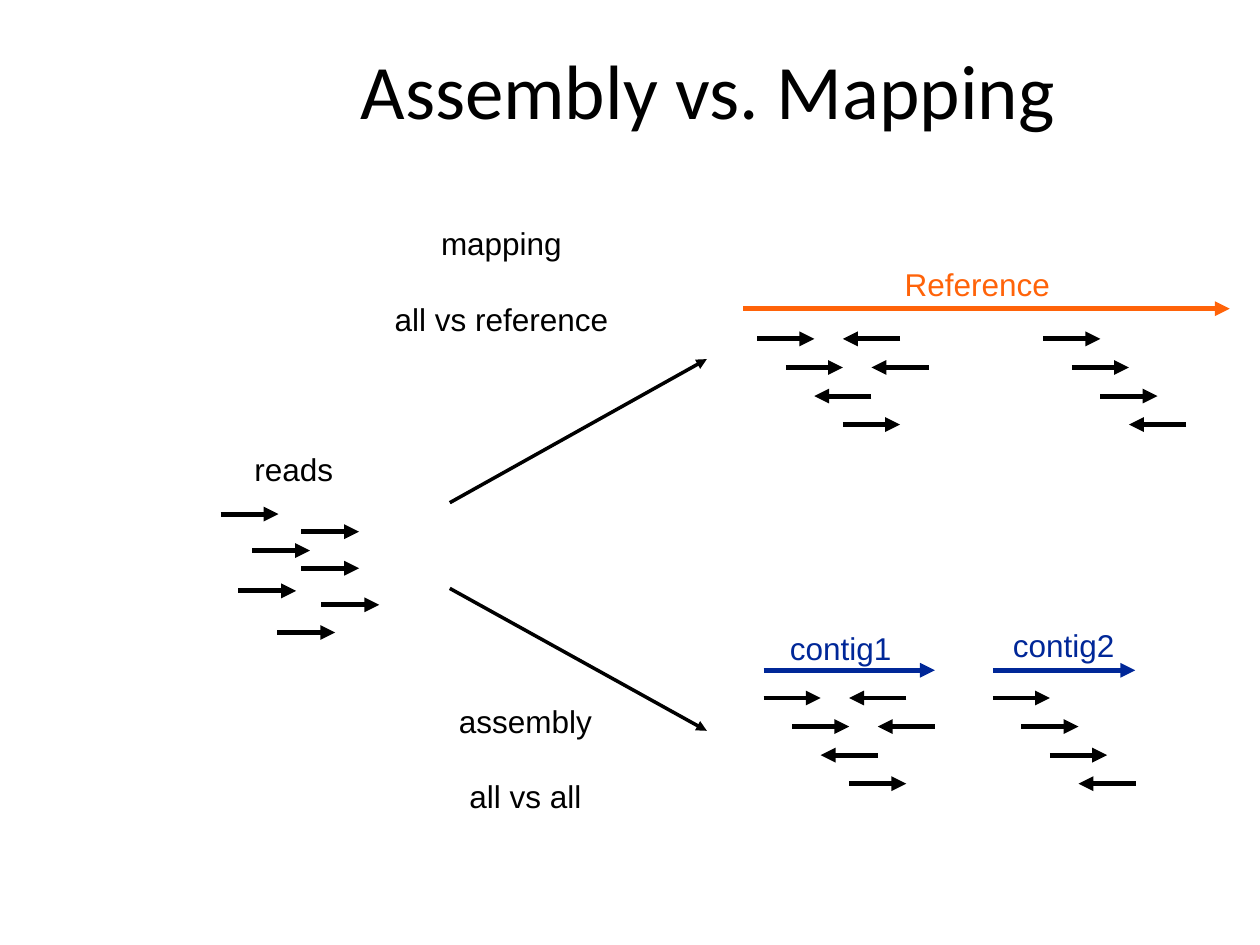
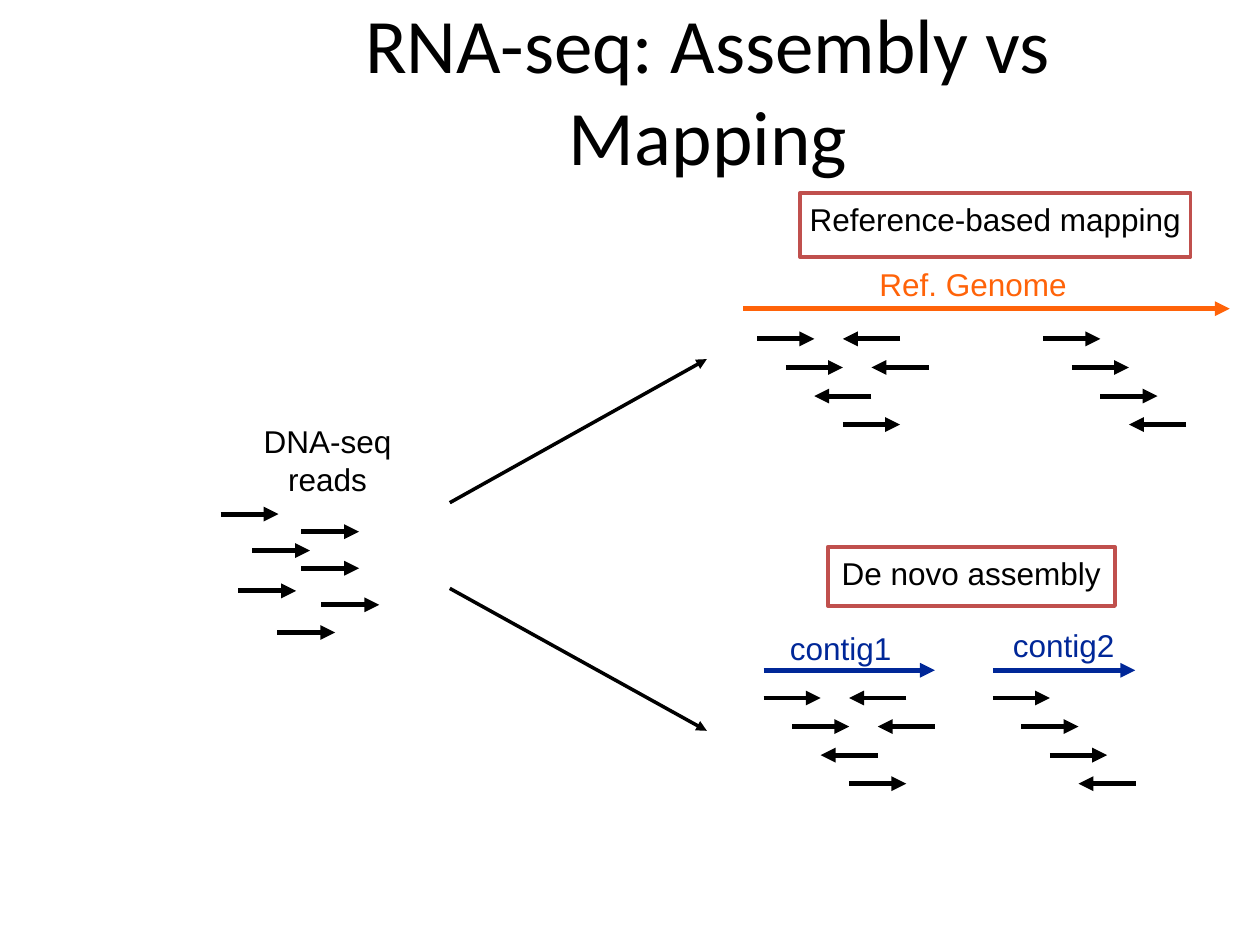
from dataclasses import dataclass

from lxml import etree
from pptx import Presentation
from pptx.dml.color import RGBColor
from pptx.enum.shapes import MSO_CONNECTOR as Connector, MSO_SHAPE as ShapeType
from pptx.enum.text import MSO_ANCHOR as Anchor, PP_ALIGN as Align
from pptx.oxml.ns import qn
from pptx.slide import Slide
from pptx.text.text import TextFrame
from pptx.util import Inches, Pt

COLORS = {
    "ink": "000000",
    "paper": "FFFFFF",
    "contig": "002798",
    "reference": "FF6309",
    "frame": "C0504D",
}
BODY_FONT, TITLE_FONT = "Arial", "Calibri"
READ_WIDTH, HAIRLINE, FRAME_WIDTH = 2.83, 0, 2
READ_LENGTH = 0.46
STEP = 0.68 / 3  # aligned reads sit on a square grid, each two steps long
BLANK_LINE_GAP = 21.5


@dataclass(frozen=True)
class Arrow:
    start: tuple[float, float]
    end: tuple[float, float]
    color: str = "ink"
    width: float = READ_WIDTH


@dataclass(frozen=True)
class Label:
    text: str
    left: float
    top: float
    width: float
    height: float
    color: str = "ink"
    align: Align = Align.LEFT
    gap: float = 0
    framed: bool = False


@dataclass(frozen=True)
class AlignedRead:
    """A read in grid steps from its pile's top left corner."""
    start: int
    row: int
    direction: int = 1


@dataclass(frozen=True)
class Page:
    title: str
    labels: tuple[Label, ...]


LEFT_PILE = (
    AlignedRead(0, 0), AlignedRead(5, 0, -1),
    AlignedRead(1, 1), AlignedRead(6, 1, -1),
    AlignedRead(4, 2, -1), AlignedRead(3, 3),
)
RIGHT_PILE = (
    AlignedRead(0, 0), AlignedRead(1, 1),
    AlignedRead(2, 2), AlignedRead(5, 3, -1),
)
PILES = (
    (6.01, 2.69, LEFT_PILE), (8.28, 2.69, RIGHT_PILE),
    (6.06, 5.54, LEFT_PILE), (7.88, 5.54, RIGHT_PILE),
)
LOOSE_READS = (
    (1.75, 4.08), (2.39, 4.22), (2.0, 4.37), (2.39, 4.51),
    (1.89, 4.69), (2.55, 4.8), (2.2, 5.02),
)
GUIDE_ARROWS = (
    Arrow((3.57, 3.99), (5.61, 2.85), width=HAIRLINE),
    Arrow((3.57, 4.67), (5.61, 5.8), width=HAIRLINE),
    Arrow((5.9, 2.45), (9.76, 2.45), "reference"),
    Arrow((6.06, 5.32), (7.42, 5.32), "contig"),
    Arrow((7.88, 5.32), (9.01, 5.32), "contig"),
)
CONTIG_LABELS = (
    Label("contig1", 6.16, 4.93, 1.1, 0.38, "contig"),
    Label("contig2", 7.93, 4.91, 1.1, 0.38, "contig"),
)
PAGES = (
    Page("Assembly vs. Mapping", (
        Label("reads", 1.91, 3.51, 0.95, 0.38),
        Label("mapping\nall vs reference", 2.98, 1.72, 2, 0.89,
              align=Align.CENTER, gap=BLANK_LINE_GAP),
        Label("assembly\nall vs all", 3.47, 5.51, 1.4, 0.89,
              align=Align.CENTER, gap=BLANK_LINE_GAP),
        Label("Reference", 7.07, 2.04, 1.45, 0.38, "reference"),
    )),
    Page("RNA-seq: Assembly vs Mapping", (
        Label("DNA-seq\nreads", 1.92, 3.29, 1.36, 0.62, align=Align.CENTER),
        Label("Ref. Genome", 6.87, 2.04, 2.44, 0.31, "reference"),
        Label("Reference-based mapping", 6.35, 1.53, 3.1, 0.51,
              align=Align.CENTER, framed=True),
        Label("De novo assembly", 6.57, 4.34, 2.28, 0.47, framed=True),
    )),
)


def rgb(name: str) -> RGBColor:
    return RGBColor.from_string(COLORS[name])


def write_text(frame: TextFrame, text: str, *, font: str = BODY_FONT,
               size: float = 18, color: str = "ink",
               align: Align = Align.LEFT, gap: float = 0) -> None:
    """Write one paragraph per line, with gap points between them."""
    for index, line in enumerate(text.split("\n")):
        paragraph = frame.add_paragraph() if index else frame.paragraphs[0]
        paragraph.alignment = align
        paragraph.space_before = Pt(gap if index else 0)
        run = paragraph.add_run()
        run.text = line
        run.font.name = font
        run.font.size = Pt(size)
        run.font.color.rgb = rgb(color)


def add_title(slide: Slide, text: str) -> None:
    title = slide.shapes.title
    title.left, title.top = Inches(1.74), Inches(0.08)
    title.width, title.height = Inches(7.76), Inches(1.25)
    title.text_frame.vertical_anchor = Anchor.MIDDLE
    write_text(title.text_frame, text, font=TITLE_FONT, size=44,
               align=Align.CENTER)


def add_label(slide: Slide, label: Label) -> None:
    bounds = [Inches(value) for value in
              (label.left, label.top, label.width, label.height)]
    if label.framed:
        shape = slide.shapes.add_shape(ShapeType.RECTANGLE, *bounds)
        shape.shadow.inherit = False
        shape.fill.solid()
        shape.fill.fore_color.rgb = rgb("paper")
        shape.line.color.rgb = rgb("frame")
        shape.line.width = Pt(FRAME_WIDTH)
    else:
        shape = slide.shapes.add_textbox(*bounds)
    frame = shape.text_frame
    frame.word_wrap = False
    frame.vertical_anchor = Anchor.TOP
    frame.margin_left = frame.margin_right = Inches(0.11)
    frame.margin_top = frame.margin_bottom = Inches(0.06)
    write_text(frame, label.text, color=label.color, align=label.align,
               gap=label.gap)


def add_arrow(slide: Slide, arrow: Arrow) -> None:
    points = [Inches(value) for value in (*arrow.start, *arrow.end)]
    connector = slide.shapes.add_connector(Connector.STRAIGHT, *points)
    connector.line.color.rgb = rgb(arrow.color)
    connector.line.width = Pt(arrow.width)
    properties = connector.element.spPr
    outline = properties.find(qn("a:ln"))
    etree.SubElement(outline, qn("a:tailEnd"), type="triangle")
    etree.SubElement(properties, qn("a:effectLst"))


def add_pile(slide: Slide, left: float, top: float,
             reads: tuple[AlignedRead, ...]) -> None:
    for read in reads:
        start = left + read.start * STEP
        end = start + 2 * read.direction * STEP
        y = top + read.row * STEP
        add_arrow(slide, Arrow((start, y), (end, y)))


def add_page(presentation: Presentation, page: Page) -> None:
    title_only = presentation.slide_layouts.get_by_name("Title Only")
    slide = presentation.slides.add_slide(title_only)
    add_title(slide, page.title)
    for x, y in LOOSE_READS:
        add_arrow(slide, Arrow((x, y), (x + READ_LENGTH, y)))
    for arrow in GUIDE_ARROWS:
        add_arrow(slide, arrow)
    for left, top, reads in PILES:
        add_pile(slide, left, top, reads)
    for label in CONTIG_LABELS + page.labels:
        add_label(slide, label)


def main() -> None:
    presentation = Presentation()
    presentation.slide_width = Inches(10)
    presentation.slide_height = Inches(7.5)
    for page in PAGES:
        add_page(presentation, page)
    presentation.save("out.pptx")


if __name__ == "__main__":
    main()
